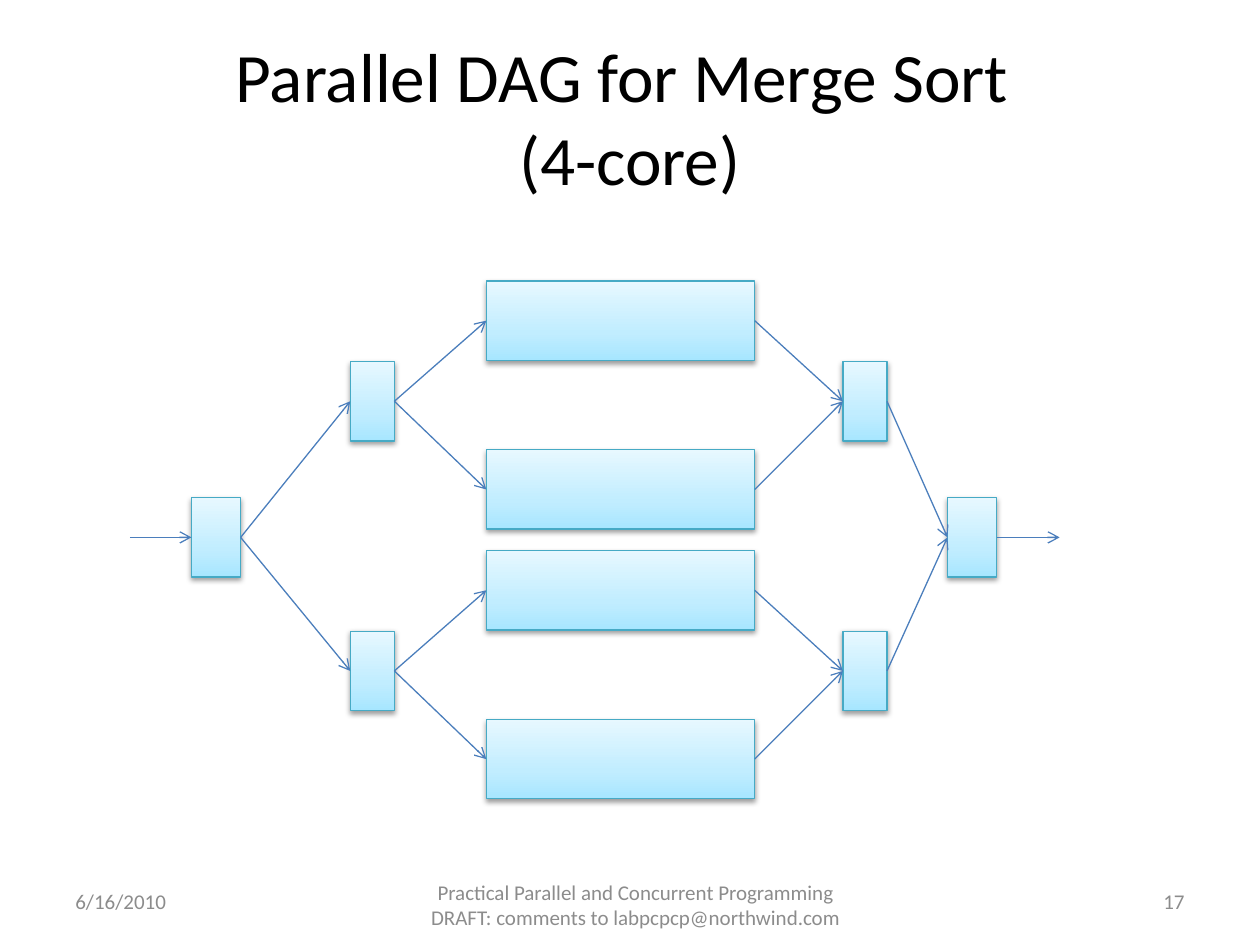
"""Build the slide showing a parallel DAG for merge sort on four cores."""
import copy

import lxml.etree
import pptx
import pptx.dml.color
import pptx.enum.shapes
import pptx.enum.text
import pptx.oxml
import pptx.oxml.ns
import pptx.util

Inches = pptx.util.Inches
RGBColor = pptx.dml.color.RGBColor
qn = pptx.oxml.ns.qn
ALIGN = pptx.enum.text.PP_ALIGN
COLORS = {
    "title": "000000",
    "footer": "8C8C8C",
    "box_bottom": "A7E6FF",
    "box_middle": "C1EDFF",
    "box_top": "E7F8FF",
    "box_line": "46AAC5",
    "arrow": "4B7EBC",
    "shadow": "000000",
}
SHADOW = (
    f'<a:outerShdw xmlns:a="{pptx.oxml.ns.nsuri("a")}" blurRad="39370" dist="20320" '
    'dir="5400000" rotWithShape="0">'
    f'<a:srgbClr val="{COLORS["shadow"]}"><a:alpha val="38000"/></a:srgbClr></a:outerShdw>'
)

presentation = pptx.Presentation()
presentation.slide_width = Inches(10)
presentation.slide_height = Inches(7.5)
slide = presentation.slides.add_slide(presentation.slide_layouts[6])


def add_text(text, left, top, width, height, size=12, color="footer", align=ALIGN.CENTER):
    shape = slide.shapes.add_textbox(Inches(left), Inches(top), Inches(width), Inches(height))
    frame = shape.text_frame
    frame.word_wrap = True
    frame.vertical_anchor = pptx.enum.text.MSO_ANCHOR.MIDDLE
    paragraph = frame.paragraphs[0]
    paragraph.text = text
    paragraph.alignment = align
    for run in paragraph.runs:
        run.font.name = "Calibri"
        run.font.size = pptx.util.Pt(size)
        run.font.color.rgb = RGBColor.from_string(COLORS[color])


add_text("Parallel DAG for Merge Sort \v(4-core)", 0.5, 0.3, 9, 1.25, size=39.6, color="title")

box_height = 0.63
boxes = {}
halves = {"upper": (slide.shapes.add_group_shape(), 2.87),
          "lower": (slide.shapes.add_group_shape(), 5.01)}
layout = [("split", slide.shapes, 1.52, 3.95, 0.39), ("merge", slide.shapes, 7.52, 3.95, 0.39)]
for half, (group, top) in halves.items():
    layout += [
        (f"{half} split", group.shapes, 2.78, top, 0.35),
        (f"{half} merge", group.shapes, 6.69, top, 0.35),
        (f"{half} sort 1", group.shapes, 3.86, top - 0.64, 2.13),
        (f"{half} sort 2", group.shapes, 3.86, top + 0.7, 2.13),
    ]

for name, shapes, left, top, width in layout:
    box = shapes.add_shape(pptx.enum.shapes.MSO_SHAPE.RECTANGLE, Inches(left), Inches(top),
                           Inches(width), Inches(box_height))
    box.fill.gradient()
    box.fill.gradient_angle = 90
    stop_list = box._element.spPr.find(".//" + qn("a:gsLst"))
    stop_list.insert(1, copy.deepcopy(stop_list[0]))
    stops = zip(box.fill.gradient_stops, (0, 0.35, 1), ("box_bottom", "box_middle", "box_top"))
    for stop, position, color in stops:
        stop.position = position
        stop.color.rgb = RGBColor.from_string(COLORS[color])
    box.line.color.rgb = RGBColor.from_string(COLORS["box_line"])
    box.line.width = pptx.util.Pt(0.75)
    box.shadow.inherit = False
    effects = box._element.spPr.find(qn("a:effectLst"))
    effects.append(pptx.oxml.parse_xml(SHADOW))
    boxes[name] = box

arrows = [(slide.shapes, None, "split"), (slide.shapes, "merge", None)]
for half, (group, top) in halves.items():
    arrows += [(slide.shapes, "split", f"{half} split"), (slide.shapes, f"{half} merge", "merge")]
    for number in (1, 2):
        sort = f"{half} sort {number}"
        arrows += [(group.shapes, f"{half} split", sort), (group.shapes, sort, f"{half} merge")]

left_site, right_site = 1, 3
middle = boxes["split"].top + boxes["split"].height // 2
for shapes, source, target in arrows:
    start, end = (Inches(1.03), middle), (Inches(8.41), middle)
    if source:
        box = boxes[source]
        start = (box.left + box.width, box.top + box.height // 2)
    if target:
        box = boxes[target]
        end = (box.left, box.top + box.height // 2)
    arrow = shapes.add_connector(pptx.enum.shapes.MSO_CONNECTOR.STRAIGHT, *start, *end)
    if source:
        arrow.begin_connect(boxes[source], right_site)
    if target:
        arrow.end_connect(boxes[target], left_site)
    arrow.line.color.rgb = RGBColor.from_string(COLORS["arrow"])
    arrow.line.width = pptx.util.Pt(0.75)
    properties = arrow._element.spPr
    lxml.etree.SubElement(properties.find(qn("a:ln")), qn("a:tailEnd"), type="arrow")
    lxml.etree.SubElement(properties, qn("a:effectLst"))

add_text("Practical Parallel and Concurrent Programming DRAFT: comments to labpcpcp@northwind.com",
         3.17, 7.03, 3.75, 0.3)
add_text("17", 7.17, 6.95, 2.33, 0.4, align=ALIGN.RIGHT)
add_text("6/16/2010", 0.5, 6.95, 2.33, 0.4, align=ALIGN.LEFT)

presentation.save("out.pptx")
